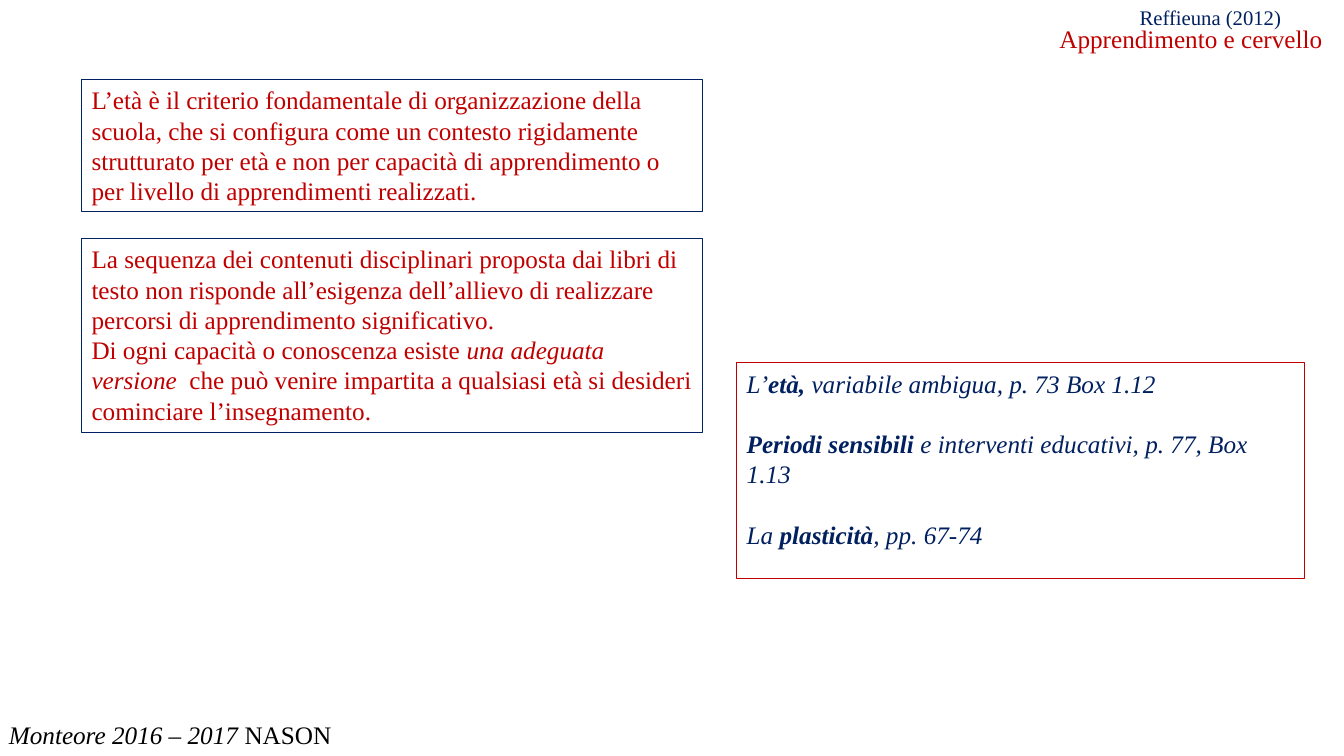
"""Build the slide on learning and the brain."""
from pptx import Presentation
from pptx.dml.color import RGBColor
from pptx.enum import shapes, text
from pptx.util import Pt

RED, NAVY, BLACK = "C00000", "002060", "000000"


def color(value):
    return RGBColor.from_string(value)


def write(shape, paras, tone, size=18, gap=0, lead=None, anchor="TOP"):
    frame = shape.text_frame
    frame.word_wrap = True
    frame.auto_size = text.MSO_AUTO_SIZE.NONE
    frame.vertical_anchor = text.MSO_ANCHOR[anchor]
    for side, inset in {"left": 7.2, "right": 7.2, "top": 3.6, "bottom": 3.6}.items():
        setattr(frame, f"margin_{side}", Pt(inset))
    for i, runs in enumerate(paras):
        para = frame.add_paragraph() if i else frame.paragraphs[0]
        style = {"alignment": text.PP_ALIGN.LEFT, "line_spacing": lead,
                 "space_before": Pt(gap if i else 0)}
        for key, value in style.items():
            setattr(para, key, value)
        for words, marks in runs:
            run = para.add_run()
            run.text = words
            look = {"name": "Times New Roman", "size": Pt(size),
                    "bold": "b" in marks, "italic": "i" in marks}
            for key, value in look.items():
                setattr(run.font, key, value)
            run.font.color.rgb = color(tone)


deck = Presentation()
deck.slide_width, deck.slide_height = Pt(960), Pt(540)
slide = deck.slides.add_slide(deck.slide_layouts[5])

title = slide.shapes.title
place = {"left": 749.5, "top": 15.8, "width": 210.5, "height": 26.6}
for key, value in place.items():
    setattr(title, key, Pt(value))
write(title, [[("Apprendimento e cervello", "")]], RED, lead=0.9, anchor="MIDDLE")

labels = [
    ((807, 3.6, 161, 22.3), [("Reffieuna (2012)", "")], NAVY, 14.8, 0.8),
    ((-0.7, 510.5, 261.4, 28.8),
     [("Monteore 2016 – 2017 ", "i"), ("NASON", "")], BLACK, 18, None),
]
for spot, runs, tone, size, lead in labels:
    label = slide.shapes.add_textbox(*map(Pt, spot))
    write(label, [runs], tone, size, lead=lead)

age = [[("L’età è il criterio fondamentale di organizzazione della scuola, "
         "che si configura come un contesto rigidamente strutturato per età "
         "e non per capacità di apprendimento o per livello di "
         "apprendimenti realizzati.", "")]]
order = [
    [("La sequenza dei contenuti disciplinari proposta dai libri di testo "
      "non risponde all’esigenza dell’allievo di realizzare percorsi di "
      "apprendimento significativo.", "")],
    [("Di ogni capacità o conoscenza esiste ", ""),
     ("una adeguata versione ", "i"),
     (" che può venire impartita a qualsiasi età si desideri cominciare "
      "l’insegnamento.", "")],
]
topics = [
    [("L’", "i"), ("età,", "bi"), (" variabile ambigua, p. 73 Box 1.12", "i")],
    [("Periodi sensibili", "bi"),
     (" e interventi educativi, p. 77, Box 1.13", "i")],
    [("La ", "i"), ("plasticità", "bi"), (", pp. 67-74", "i")],
]
boxes = [
    ((58.3, 56.9, 443.5, 94.3), age, RED, NAVY, 0),
    ((58.3, 170.6, 443.5, 138.2), order, RED, NAVY, 0),
    ((526.3, 259.2, 405.4, 154.1), topics, NAVY, RED, 21.6),
]
for spot, paras, tone, edge, gap in boxes:
    box = slide.shapes.add_shape(shapes.MSO_SHAPE.RECTANGLE, *map(Pt, spot))
    box.shadow.inherit = False
    box.fill.background()
    box.line.color.rgb = color(edge)
    box.line.width = Pt(0.75)
    write(box, paras, tone, gap=gap)

deck.save("out.pptx")
